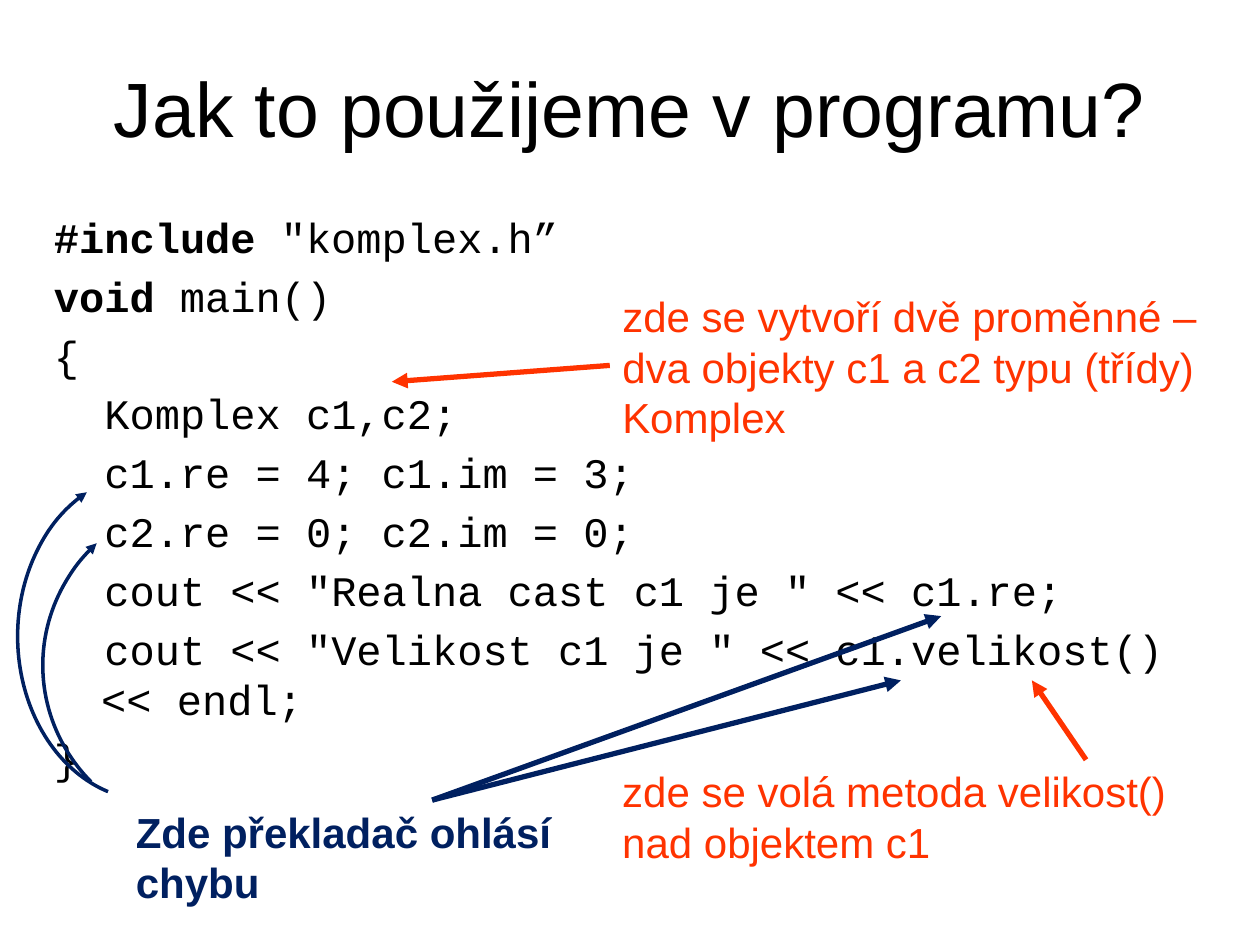
"""Build the slide on using a class in a program, with annotated code."""
import dataclasses

import lxml.etree
import pptx
import pptx.dml.color
import pptx.enum.shapes
import pptx.enum.text
import pptx.oxml.ns
import pptx.util


@dataclasses.dataclass(frozen=True)
class Theme:
    black: str = "000000"
    orange: str = "FF3300"
    navy: str = "002060"
    sans: str = "Arial"
    mono: str = "Courier New"
    title_size: int = 44
    text_size: int = 24
    arrow_width: int = 3
    arc_width: int = 2


theme = Theme()
presentation = pptx.Presentation()
presentation.slide_width = pptx.util.Inches(10)
presentation.slide_height = pptx.util.Inches(7.5)
slide = presentation.slides.add_slide(presentation.slide_layouts[6])
column = presentation.slide_width / 100
row = presentation.slide_height / 75


def add_text(box, lines, color, font=theme.sans, size=theme.text_size, bold=False):
    left, top, width, height = box
    shape = slide.shapes.add_textbox(
        int(left * column), int(top * row), int(width * column), int(height * row)
    )
    shape.text_frame.word_wrap = True
    shape.text_frame.text = "\n".join(lines)
    for paragraph in shape.text_frame.paragraphs:
        paragraph.font.name = font
        paragraph.font.size = pptx.util.Pt(size)
        paragraph.font.bold = bold
        paragraph.font.color.rgb = pptx.dml.color.RGBColor.from_string(color)
    return shape.text_frame


def style_arrow(shape, color, width):
    shape.line.color.rgb = pptx.dml.color.RGBColor.from_string(color)
    shape.line.width = pptx.util.Pt(width)
    properties = shape.element.spPr
    line = properties.find(pptx.oxml.ns.qn("a:ln"))
    lxml.etree.SubElement(line, pptx.oxml.ns.qn("a:tailEnd"), type="triangle")
    lxml.etree.SubElement(properties, pptx.oxml.ns.qn("a:effectLst"))


title = add_text(
    (7.5, 2.2, 85, 12.5), ["Jak to použijeme v programu?"], theme.black, size=theme.title_size
)
title.vertical_anchor = pptx.enum.text.MSO_ANCHOR.MIDDLE
title.paragraphs[0].alignment = pptx.enum.text.PP_ALIGN.CENTER

code_lines = [
    '#include "komplex.h”',
    "void main()",
    "{",
    "  Komplex c1,c2;",
    "  c1.re = 4; c1.im = 3;",
    "  c2.re = 0; c2.im = 0;",
    '  cout << "Realna cast c1 je " << c1.re;',
    '  cout << "Velikost c1 je " << c1.velikost() << endl;',
    "}",
]
code = add_text((3.3, 16.3, 95.5, 36.8), code_lines, theme.black, font=theme.mono)
indent = int(3.75 * column)
for paragraph in code.paragraphs:
    paragraph.space_before = pptx.util.Pt(theme.text_size * 0.2)
    paragraph_properties = paragraph.font._element.getparent()
    paragraph_properties.set("marL", str(indent))
    paragraph_properties.set("indent", str(-indent))
    keyword, space, rest = paragraph.text.partition(" ")
    if keyword in ("#include", "void"):
        paragraph.text = keyword
        paragraph.runs[0].font.bold = True
        paragraph.add_run().text = space + rest

notes = [
    (
        (48.4, 22.6, 48.8, 13.1),
        ["zde se vytvoří dvě proměnné –", "dva objekty c1 a c2 typu (třídy) Komplex"],
        theme.orange,
        False,
    ),
    (
        (48.4, 60.3, 50.4, 9.1),
        ["zde se volá metoda velikost()", "nad objektem c1"],
        theme.orange,
        False,
    ),
    ((9.8, 63.5, 35.4, 9.1), ["Zde překladač ohlásí chybu"], theme.navy, True),
]
for box, lines, color, bold in notes:
    add_text(box, lines, color, bold=bold)

arrows = [
    ((48.4, 29), (31.1, 30.3), theme.orange),
    ((86.2, 60.3), (81.9, 54), theme.orange),
    ((34.3, 63.5), (71.5, 54), theme.navy),
    ((34.3, 63.5), (74.7, 48.9), theme.navy),
]
for (start_x, start_y), (end_x, end_y), color in arrows:
    connector = slide.shapes.add_connector(
        pptx.enum.shapes.MSO_CONNECTOR.STRAIGHT,
        int(start_x * column), int(start_y * row), int(end_x * column), int(end_y * row),
    )
    style_arrow(connector, color, theme.arrow_width)

arcs = [
    ((1.4, 37.5, 21, 26), (105.08, 246.35)),
    ((3.4, 39.4, 27.7, 26.8), (137.27, 225.34)),
]
for (left, top, width, height), angles in arcs:
    arc = slide.shapes.add_shape(
        pptx.enum.shapes.MSO_SHAPE.ARC,
        int(left * column), int(top * row), int(width * column), int(height * row),
    )
    for index, degrees in enumerate(angles):
        arc.adjustments[index] = degrees * 0.6
    arc.fill.background()
    style_arrow(arc, theme.navy, theme.arc_width)

presentation.save("out.pptx")
